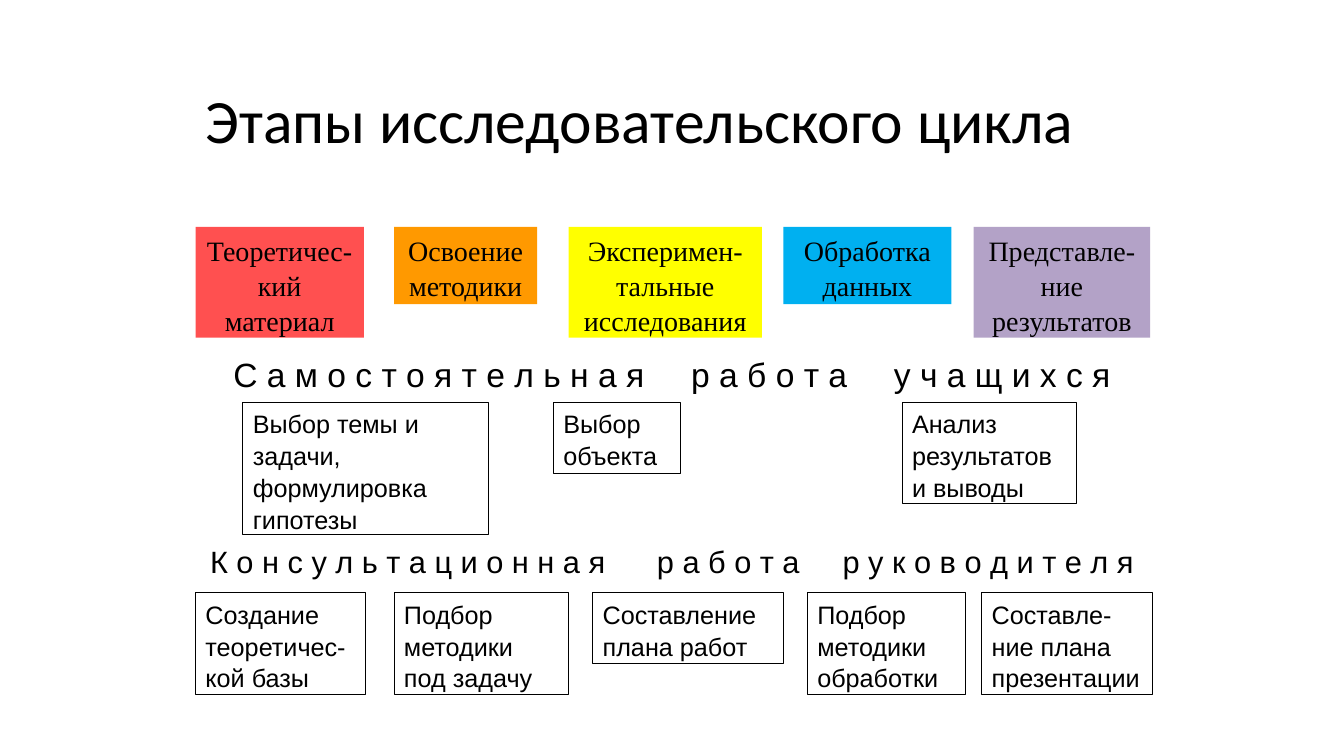
from pptx import Presentation
from pptx.dml.color import RGBColor
from pptx.enum.shapes import MSO_SHAPE
from pptx.enum.text import MSO_ANCHOR, MSO_AUTO_SIZE, PP_ALIGN
from pptx.util import Pt

INK = "000000"
PADDING = 7.2  # top and bottom insets of a box together
SPACE_WIDTH = 0.278  # width of an Arial space, as a share of the font size

# Each item: offset from the row's left edge, width, number of lines, text, fill
STAGES = [
    (0, 120.2, 3, "Теоретичес-кий материал", "FF5050"),
    (141.8, 102.2, 2, "Освоение методики", "FF9900"),
    (266.4, 138.2, 3, "Эксперимен-тальные исследования", "FFFF00"),
    (419.8, 120.2, 2, "Обработка данных", "00B0F0"),
    (555.8, 126, 3, "Представле-ние результатов", "B3A2C7"),
]
STUDENT_TASKS = [
    (33.8, 175.7, 4, "Выбор темы и задачи, формулировка гипотезы", None),
    (255.6, 90.7, 2, "Выбор объекта", None),
    (504.7, 124.6, 3, "Анализ результатов и выводы", None),
]
ADVISER_TASKS = [
    (0, 121.7, 3, "Создание теоретичес-кой базы", None),
    (141.8, 124.6, 3, "Подбор методики под задачу", None),
    (283.7, 136.1, 2, "Составление плана работ", None),
    (437, 113, 3, "Подбор методики обработки", None),
    (561.6, 121.7, 3, "Составле-ние плана презентации", None),
]


def color(hex_value):
    return RGBColor.from_string(hex_value)


def add_run(paragraph, text, font_name, size):
    run = paragraph.add_run()
    run.text = text
    run.font.name = font_name
    run.font.size = Pt(size)
    run.font.color.rgb = color(INK)
    return run


def add_title(slide, left, top, width, height, text):
    title = slide.shapes.title
    title.left, title.top, title.width, title.height = map(Pt, (left, top, width, height))
    frame = title.text_frame
    frame.word_wrap = True
    frame.vertical_anchor = MSO_ANCHOR.MIDDLE
    paragraph = frame.paragraphs[0]
    paragraph.alignment = PP_ALIGN.LEFT
    paragraph.line_spacing = 0.9
    add_run(paragraph, text, "Calibri", 44)


def add_box_row(slide, left, top, items, font_name, size, line_height, alignment):
    for offset, width, lines, text, fill in items:
        height = lines * line_height + PADDING
        shape = slide.shapes.add_shape(
            MSO_SHAPE.RECTANGLE, Pt(left + offset), Pt(top), Pt(width), Pt(height))
        shape.shadow.inherit = False
        # Coloured boxes have no outline, plain boxes have no fill
        if fill:
            shape.fill.solid()
            shape.fill.fore_color.rgb = color(fill)
            shape.line.fill.background()
        else:
            shape.fill.background()
            shape.line.color.rgb = color(INK)
            shape.line.width = Pt(0.75)
        frame = shape.text_frame
        frame.word_wrap = True
        frame.auto_size = MSO_AUTO_SIZE.SHAPE_TO_FIT_TEXT
        frame.vertical_anchor = MSO_ANCHOR.TOP
        paragraph = frame.paragraphs[0]
        paragraph.alignment = alignment
        paragraph.line_spacing = 1.05
        add_run(paragraph, text, font_name, size)


def add_band_heading(slide, left, top, width, height, words, gaps, size):
    """Write spaced-out letters; gaps gives the spaces' worth between words."""
    frame = slide.shapes.add_textbox(Pt(left), Pt(top), Pt(width), Pt(height)).text_frame
    frame.word_wrap = True
    frame.auto_size = MSO_AUTO_SIZE.SHAPE_TO_FIT_TEXT
    paragraph = frame.paragraphs[0]
    paragraph.alignment = PP_ALIGN.CENTER
    paragraph.line_spacing = 1.05
    for index, word in enumerate(words):
        if index:
            space = add_run(paragraph, " ", "Arial", size)
            extra = (gaps[index - 1] - 1) * SPACE_WIDTH * size
            # Character spacing is stored in hundredths of a point
            space.font._element.set("spc", str(round(extra * 100)))
        add_run(paragraph, " ".join(word), "Arial", size)


def main():
    presentation = Presentation()
    presentation.slide_width, presentation.slide_height = Pt(960), Pt(540)
    slide = presentation.slides.add_slide(presentation.slide_layouts[5])
    left = 139.7

    # Title and stages of the cycle
    add_title(slide, left, 43.2, 683.3, 90, "Этапы исследовательского цикла")
    add_box_row(slide, left, 162, STAGES, "Times New Roman", 20, 24, PP_ALIGN.CENTER)

    # Students' own work
    add_band_heading(slide, 120, 247.7, 720, 36,
                     ["Самостоятельная", "работа", "учащихся"], [5, 5], 24)
    add_box_row(slide, left, 287.3, STUDENT_TASKS, "Arial", 18, 21.8, PP_ALIGN.LEFT)

    # Adviser's consulting work
    add_band_heading(slide, 120, 383, 720, 33.8,
                     ["Консультационная", "работа", "руководителя"], [6, 5], 22)
    add_box_row(slide, left, 423.4, ADVISER_TASKS, "Arial", 18, 21.8, PP_ALIGN.LEFT)

    presentation.save("out.pptx")


if __name__ == "__main__":
    main()
